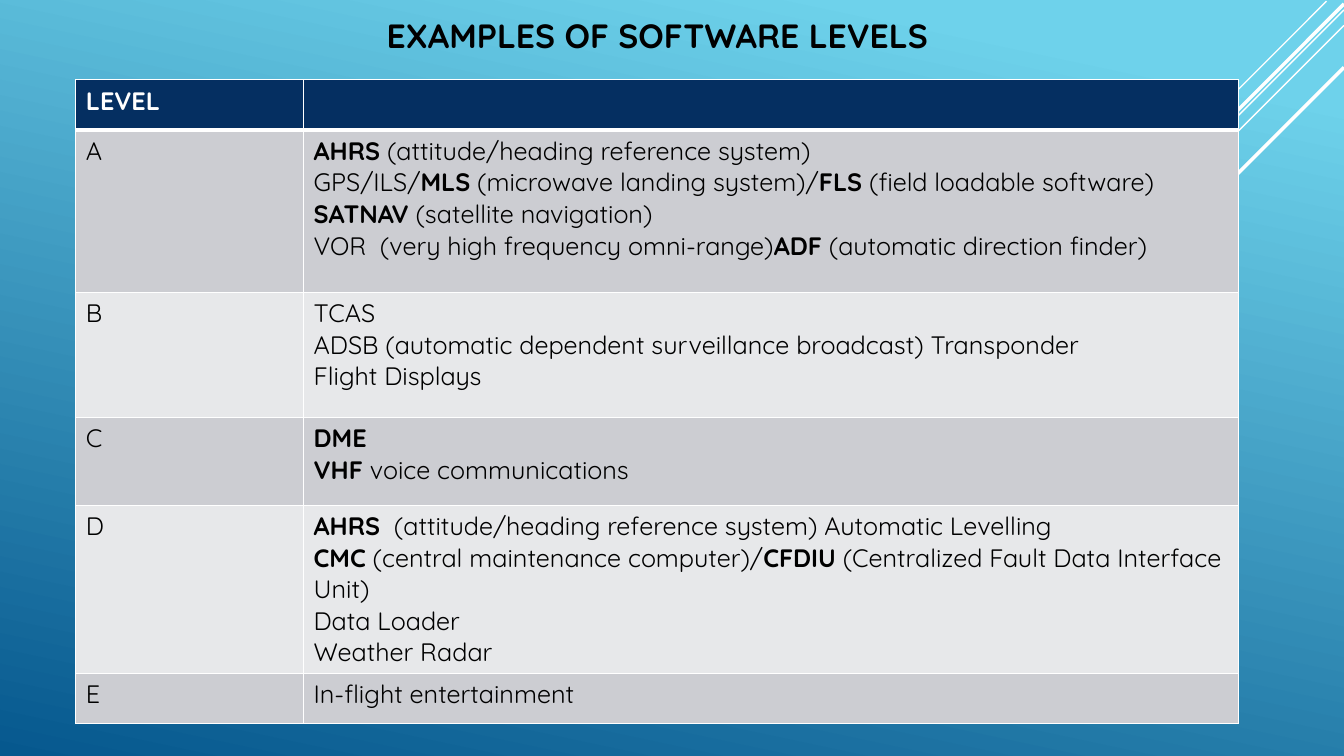
"""Build a slide with a table of example systems for each software level."""
import lxml.etree
import pptx
import pptx.dml.color
import pptx.enum.text
import pptx.oxml
import pptx.oxml.ns
import pptx.util
from pptx.util import Cm, Pt

FONT = "Quicksand"
COLORS = {
    "sky": "6ED2EB",
    "sea": "06588E",
    "header": "052F61",
    "dark_band": "CCCDD2",
    "light_band": "E7E8EA",
    "white": "FFFFFF",
    "black": "000000",
}
RAYS = [
    (33.43, 0.03, 10.58, 1),
    (33.87, 0.25, 16.89, 1),
    (33.87, 0.64, 13.77, 1),
    (33.87, 0.1, 13.48, 2.5),
    (33.87, 1.7, 12.07, 2.5),
]
COLUMN_WIDTHS = [5.74, 23.57]
ROW_HEIGHTS = [1.27, 4.09, 3.15, 2.21, 4.09, 1.27]
ROWS = [
    ("*LEVEL*", []),
    ("A", [
        "*AHRS* (attitude/heading reference system)",
        "GPS/ILS/*MLS* (microwave landing system)/*FLS* (field loadable software)",
        "*SATNAV* (satellite navigation)",
        "VOR  (very high frequency omni-range)*ADF* (automatic direction finder)",
    ]),
    ("B", [
        "TCAS",
        "ADSB (automatic dependent surveillance broadcast) Transponder",
        "Flight Displays",
    ]),
    ("C", ["*DME*", "*VHF* voice communications"]),
    ("D", [
        "*AHRS*  (attitude/heading reference system) Automatic Levelling",
        "*CMC* (central maintenance computer)/*CFDIU* (Centralized Fault Data Interface Unit)",
        "Data Loader",
        "Weather Radar",
    ]),
    ("E", ["In-flight entertainment"]),
]


def rgb(name):
    """Return the named colour."""
    return pptx.dml.color.RGBColor.from_string(COLORS[name])


def format_run(run, size, color, bold):
    """Set the font of a run."""
    run.font.name = FONT
    run.font.size = Pt(size)
    run.font.bold = bold
    run.font.color.rgb = rgb(color)


def paint_background(slide):
    """Fill the slide with a slanted blue gradient."""
    fill = slide.background.fill
    fill.gradient()
    fill.gradient_angle = 258
    for stop, position, name in zip(fill.gradient_stops, (0.1, 1), ("sky", "sea")):
        stop.position = position
        stop.color.rgb = rgb(name)


def add_ray(slide, x, y, reach, width):
    """Draw a white diagonal running down and left from a point."""
    ray = slide.shapes.add_connector(
        pptx.enum.shapes.MSO_CONNECTOR.STRAIGHT,
        Cm(x), Cm(y), Cm(x - reach), Cm(y + reach))
    ray.line.color.rgb = rgb("white")
    ray.line.width = Pt(width)
    lxml.etree.SubElement(ray._element.spPr, pptx.oxml.ns.qn("a:effectLst"))


def set_title(slide, text):
    """Place and format the slide title."""
    title = slide.shapes.title
    title.left, title.top, title.width, title.height = Cm(1.91), Cm(0.38), Cm(29.31), Cm(1.14)
    frame = title.text_frame
    frame.text = text
    frame.auto_size = pptx.enum.text.MSO_AUTO_SIZE.NONE
    frame.vertical_anchor = pptx.enum.text.MSO_ANCHOR.BOTTOM
    paragraph = frame.paragraphs[0]
    paragraph.alignment = pptx.enum.text.PP_ALIGN.CENTER
    format_run(paragraph.runs[0], 24, "black", True)


def set_borders(cell, bottom, top):
    """Give a cell white borders of one point, or as stated at top and bottom."""
    properties = cell._tc.get_or_add_tcPr()
    for index, (side, width) in enumerate((("L", 1), ("R", 1), ("T", top), ("B", bottom))):
        border = pptx.oxml.parse_xml(
            f'<a:ln{side} {pptx.oxml.ns.nsdecls("a")} w="{Pt(width)}"><a:solidFill>'
            f'<a:srgbClr val="{COLORS["white"]}"/></a:solidFill></a:ln{side}>')
        properties.insert(index, border)


def write_cell(cell, lines, color):
    """Write one paragraph per line, with starred parts in bold."""
    for index, line in enumerate(lines):
        frame = cell.text_frame
        paragraph = frame.add_paragraph() if index else frame.paragraphs[0]
        for part, text in enumerate(line.split("*")):
            if text:
                run = paragraph.add_run()
                run.text = text
                format_run(run, 18, color, part % 2 == 1)


def add_level_table(slide):
    """Add the table of software levels."""
    table = slide.shapes.add_table(
        len(ROWS), len(COLUMN_WIDTHS), Cm(1.91), Cm(2.01),
        Cm(sum(COLUMN_WIDTHS)), Cm(sum(ROW_HEIGHTS))).table
    for column, width in zip(table.columns, COLUMN_WIDTHS):
        column.width = Cm(width)
    for index, (level, systems) in enumerate(ROWS):
        table.rows[index].height = Cm(ROW_HEIGHTS[index])
        band = "header" if index == 0 else ("light_band", "dark_band")[index % 2]
        for cell, lines in zip(table.rows[index].cells, ([level], systems)):
            cell.fill.solid()
            cell.fill.fore_color.rgb = rgb(band)
            set_borders(cell, 3 if index == 0 else 1, 3 if index == 1 else 1)
            write_cell(cell, lines, "black" if index else "white")


def main():
    """Build and save the presentation."""
    presentation = pptx.Presentation()
    presentation.slide_width, presentation.slide_height = Cm(33.87), Cm(19.05)
    slide = presentation.slides.add_slide(presentation.slide_layouts[5])
    paint_background(slide)
    for ray in RAYS:
        add_ray(slide, *ray)
    set_title(slide, "EXAMPLES OF SOFTWARE LEVELS")
    add_level_table(slide)
    presentation.save("out.pptx")


if __name__ == "__main__":
    main()
